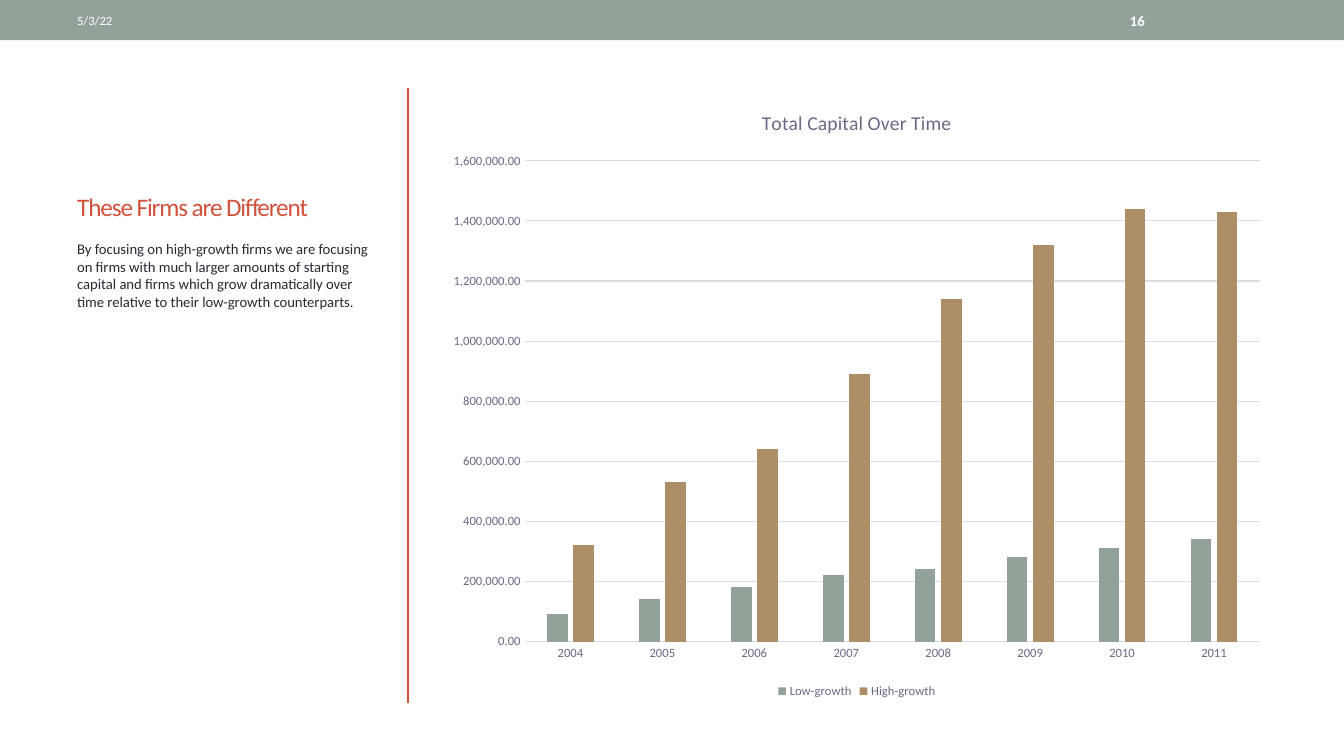
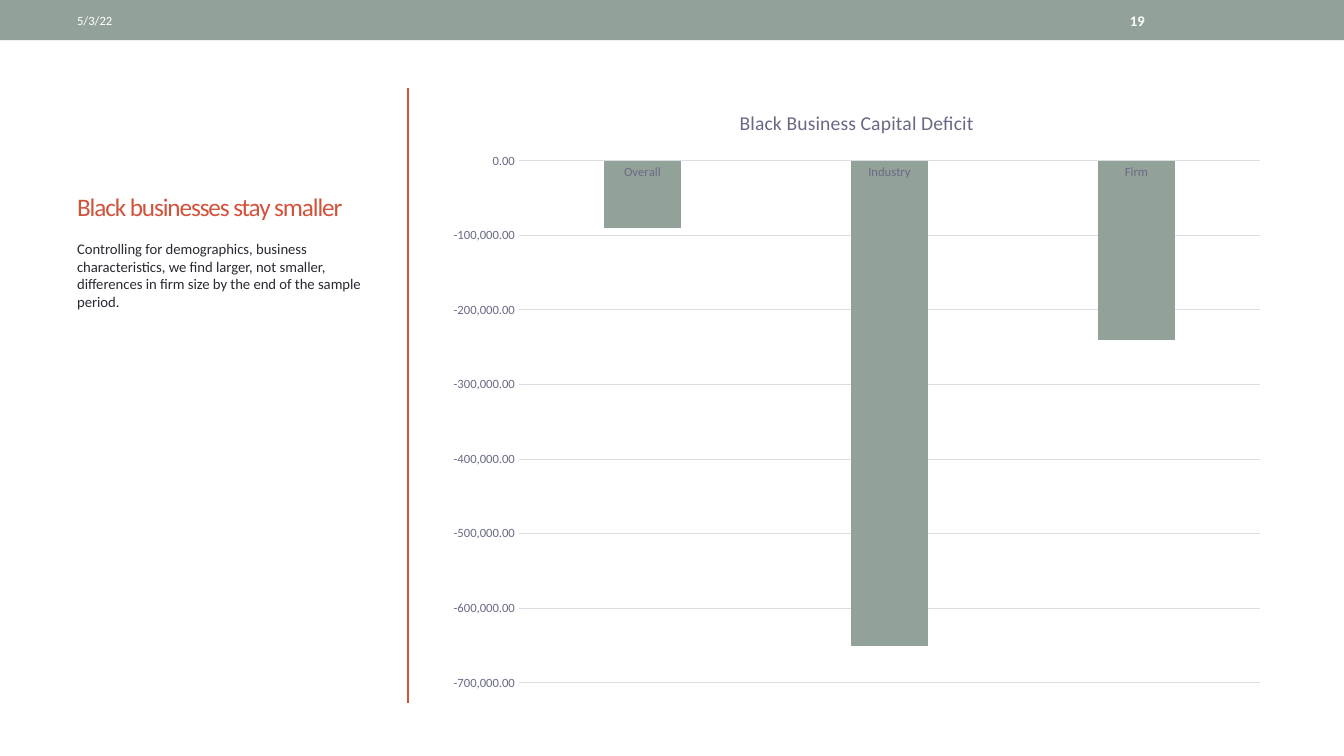
import pptx
import pptx.chart.data
import pptx.dml.color
import pptx.enum.chart
import pptx.enum.shapes
import pptx.enum.text
import pptx.oxml
import pptx.oxml.ns
import pptx.util

Pt = pptx.util.Pt
RGBColor = pptx.dml.color.RGBColor
Anchor = pptx.enum.text.MSO_ANCHOR
ChartKind = pptx.enum.chart

SAGE = RGBColor(0x93, 0xA2, 0x99)
TAN = RGBColor(0xAD, 0x8F, 0x67)
RED = RGBColor(0xD2, 0x53, 0x3C)
INK = RGBColor(0x29, 0x29, 0x34)
SLATE = RGBColor(0x69, 0x69, 0x86)
GRID = RGBColor(0xDC, 0xDC, 0xE3)
WHITE = RGBColor(0xFF, 0xFF, 0xFF)

FONT = "Calibri"
PAGE_WIDTH, PAGE_HEIGHT = 960, 540
BAND_HEIGHT = 28.8
MARGIN = 48
CONTENT_TOP, CONTENT_HEIGHT = 62.6, 439.2
TEXT_AREA = (MARGIN, CONTENT_TOP, 224.6, CONTENT_HEIGHT)
CHART_AREA = (312, CONTENT_TOP, 600, CONTENT_HEIGHT)
DIVIDER_LEFT = 291.6
TITLE_HEIGHT = 99.4
TITLE_GAP = 5.8


def style_font(font, size, color, bold=False):
    font.name = FONT
    font.size = Pt(size)
    font.bold = bold
    font.color.rgb = color


def add_text(page, area, text, size, color, bold=False, anchor=Anchor.TOP, spacing=None):
    box = page.shapes.add_textbox(*map(Pt, area))
    frame = box.text_frame
    frame.word_wrap = True
    frame.vertical_anchor = anchor
    span = frame.paragraphs[0].add_run()
    span.text = text
    style_font(span.font, size, color, bold)
    if spacing is not None:
        span.font._element.set("spc", str(round(spacing * 100)))


def add_band(page, area, date, number):
    left, top, width, height = area
    band = page.shapes.add_shape(pptx.enum.shapes.MSO_SHAPE.RECTANGLE, *map(Pt, area))
    band.shadow.inherit = False
    band.fill.solid()
    band.fill.fore_color.rgb = SAGE
    band.line.fill.background()
    text_top, text_height = top + 1.4, height - 2.8
    add_text(page, (left + MARGIN, text_top, 304, text_height), date, 9, WHITE,
             anchor=Anchor.MIDDLE)
    add_text(page, (left + width - 160, text_top, 112, text_height), number, 10.5, WHITE,
             bold=True, anchor=Anchor.MIDDLE)


def add_divider(page, left, top, height):
    line = page.shapes.add_connector(
        pptx.enum.shapes.MSO_CONNECTOR.STRAIGHT, Pt(left), Pt(top), Pt(left), Pt(top + height))
    line.line.color.rgb = RED
    line.line.width = Pt(1.5)
    line._element.spPr.append(pptx.oxml.parse_xml(
        "<a:effectLst %s/>" % pptx.oxml.ns.nsdecls("a")))


def add_message(page, area, title, body):
    left, top, width, height = area
    body_offset = TITLE_HEIGHT + TITLE_GAP
    add_text(page, (left, top, width, TITLE_HEIGHT), title, 18, RED,
             anchor=Anchor.BOTTOM, spacing=-0.8)
    add_text(page, (left, top + body_offset, width, height - body_offset), body, 10.5, INK)


def style_axis(axis):
    axis.major_tick_mark = ChartKind.XL_TICK_MARK.NONE
    axis.minor_tick_mark = ChartKind.XL_TICK_MARK.NONE
    style_font(axis.tick_labels.font, 9, SLATE)


def style_line(line):
    line.color.rgb = GRID
    line.width = Pt(0.75)


def add_column_chart(page, area, title, categories, series, limits, step, legend):
    data = pptx.chart.data.CategoryChartData(number_format="#,##0.00")
    data.categories = categories
    for name, values, color in series:
        data.add_series(name, values)
    chart = page.shapes.add_chart(
        ChartKind.XL_CHART_TYPE.COLUMN_CLUSTERED, *map(Pt, area), data).chart
    style_font(chart.font, 10, INK)

    chart.has_title = True
    para = chart.chart_title.text_frame.paragraphs[0]
    span = para.add_run()
    span.text = title
    style_font(span.font, 14, SLATE)
    chart.chart_title.include_in_layout = False

    chart.has_legend = legend
    if legend:
        chart.legend.position = ChartKind.XL_LEGEND_POSITION.BOTTOM
        chart.legend.include_in_layout = False
        style_font(chart.legend.font, 9, SLATE)

    style_axis(chart.category_axis)
    style_line(chart.category_axis.format.line)
    value_axis = chart.value_axis
    style_axis(value_axis)
    value_axis.format.line.fill.background()
    value_axis.has_major_gridlines = True
    style_line(value_axis.major_gridlines.format.line)
    value_axis.minimum_scale, value_axis.maximum_scale = limits
    value_axis.major_unit = step
    value_axis.tick_labels.number_format = "#,##0.00"
    value_axis.tick_labels.number_format_is_linked = False

    plot = chart.plots[0]
    plot.vary_by_categories = False
    plot.gap_width = 219
    plot.overlap = -27
    for column, (name, values, color) in zip(plot.series, series):
        column.invert_if_negative = False
        column.format.fill.solid()
        column.format.fill.fore_color.rgb = color


def add_chart_page(deck, number, title, body, chart):
    page = deck.slides.add_slide(deck.slide_layouts[6])
    add_band(page, (0, 0, PAGE_WIDTH, BAND_HEIGHT), "5/3/22", number)
    add_divider(page, DIVIDER_LEFT, CONTENT_TOP, CONTENT_HEIGHT)
    add_message(page, TEXT_AREA, title, body)
    add_column_chart(page, CHART_AREA, **chart)


def main():
    deck = pptx.Presentation()
    deck.slide_width, deck.slide_height = Pt(PAGE_WIDTH), Pt(PAGE_HEIGHT)
    add_chart_page(
        deck, "16", "These Firms are Different",
        "By focusing on high-growth firms we are focusing on firms with much larger amounts "
        "of starting capital and firms which grow dramatically over time relative to their "
        "low-growth counterparts.",
        dict(
            title="Total Capital Over Time",
            categories=[str(year) for year in range(2004, 2012)],
            series=[
                ("Low-growth", (90000, 140000, 180000, 220000,
                                240000, 280000, 310000, 340000), SAGE),
                ("High-growth", (320000, 530000, 640000, 890000,
                                 1140000, 1320000, 1440000, 1430000), TAN),
            ],
            limits=(0, 1600000), step=200000, legend=True))
    deficit = "Black Business Capital Deficit"
    add_chart_page(
        deck, "19", "Black businesses stay smaller",
        "Controlling for demographics, business characteristics, we find larger, not smaller, "
        "differences in firm size by the end of the sample period.",
        dict(
            title=deficit,
            categories=["Overall", "Industry", "Firm"],
            series=[(deficit, (-90000, -650000, -240000), SAGE)],
            limits=(-700000, 0), step=100000, legend=False))
    deck.save("out.pptx")


if __name__ == "__main__":
    main()
